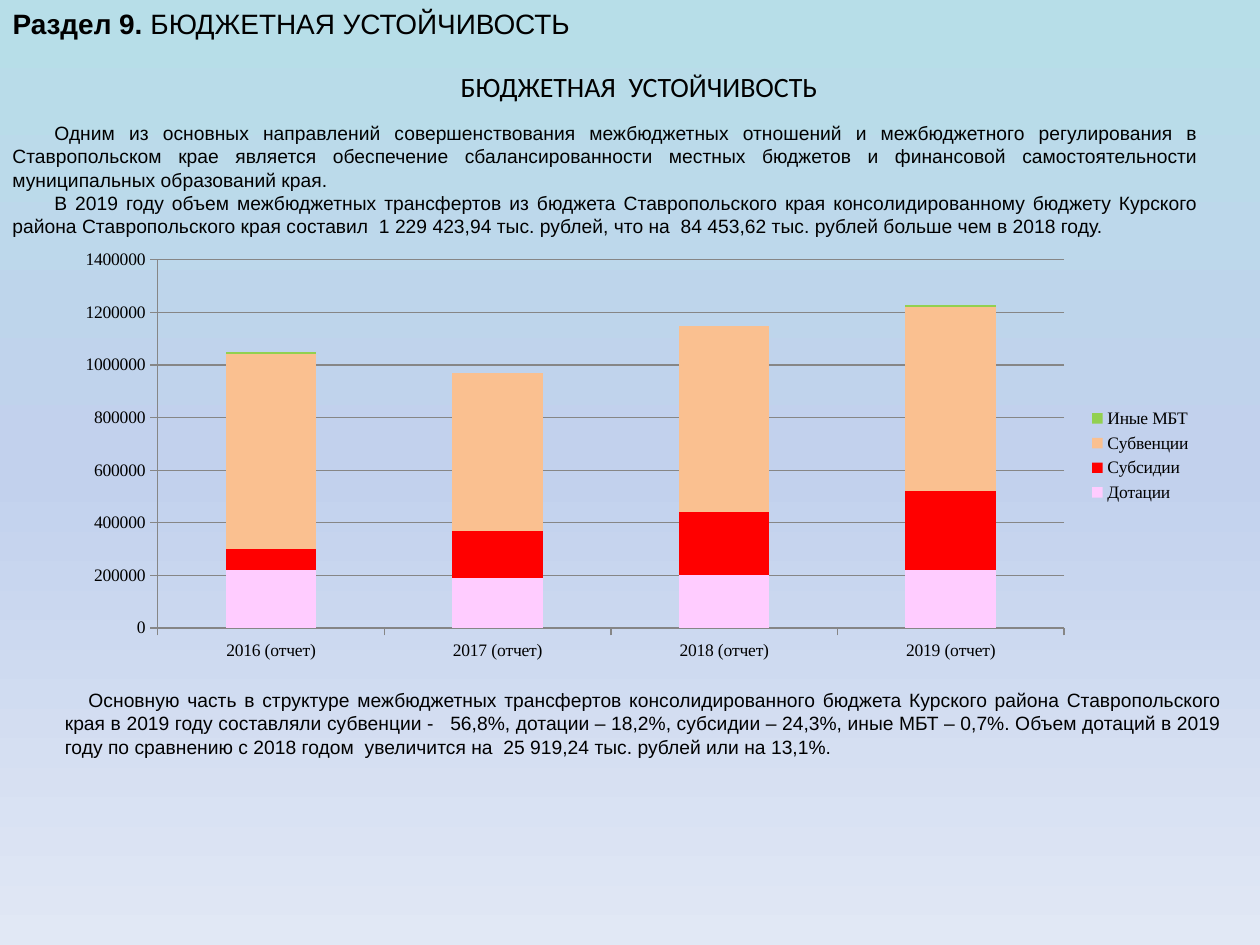
from copy import deepcopy

from lxml.etree import SubElement
from pptx import Presentation
from pptx.chart.data import CategoryChartData
from pptx.dml.color import RGBColor
from pptx.enum.chart import XL_CHART_TYPE, XL_LEGEND_POSITION, XL_TICK_MARK
from pptx.enum.text import MSO_ANCHOR, PP_ALIGN
from pptx.oxml.ns import qn
from pptx.util import Pt

# Content
COLORS = {
    "text": "000000", "axis": "868686",
    "sky": "B7DEE8", "middle": "C2D1ED", "pale": "E1E8F5",
    "Дотации": "FFCCFF", "Субсидии": "FF0000",
    "Субвенции": "FAC090", "Иные МБТ": "92D050",
}
BACKGROUND = [(0, "sky"), (0.5, "middle"), (1, "pale")]

TITLE = [("Раздел 9. ", True), ("БЮДЖЕТНАЯ УСТОЙЧИВОСТЬ", False)]
HEADING = [("БЮДЖЕТНАЯ  УСТОЙЧИВОСТЬ", False)]
INTRO = [
    "Одним из основных направлений совершенствования межбюджетных отношений и "
    "межбюджетного регулирования в Ставропольском крае является обеспечение "
    "сбалансированности местных бюджетов и финансовой самостоятельности "
    "муниципальных образований края.",
    "В 2019 году объем межбюджетных трансфертов из бюджета Ставропольского края "
    "консолидированному бюджету Курского района Ставропольского края составил  "
    "1 229 423,94 тыс. рублей, что на  84 453,62 тыс. рублей больше чем в 2018 году.",
]
SUMMARY = [
    "Основную часть в структуре межбюджетных трансфертов консолидированного бюджета "
    "Курского района Ставропольского края в 2019 году составляли субвенции -   56,8%, "
    "дотации – 18,2%, субсидии – 24,3%, иные МБТ – 0,7%. Объем дотаций в 2019 году по "
    "сравнению с 2018 годом  увеличится на  25 919,24 тыс. рублей или на 13,1%.",
]
YEARS = [f"{year} (отчет)" for year in range(2016, 2020)]
TRANSFERS = {
    "Дотации": (220000, 190000, 200000, 220000),
    "Субсидии": (80000, 180000, 240000, 300000),
    "Субвенции": (740000, 600000, 710000, 700000),
    "Иные МБТ": (10000, 0, 0, 10000),
}
PLOT_AREA = {"x": 0.083, "y": 0.042, "w": 0.794, "h": 0.862}


def rgb(name):
    return RGBColor.from_string(COLORS[name])


def apply(target, values):
    for name, value in values.items():
        setattr(target, name, value)


def style_font(font, face, size, bold=False):
    apply(font, {"name": face, "size": Pt(size), "bold": bold})
    font.color.rgb = rgb("text")


def place(shape, left, top, width, height, wrap=True, margin_left=7.2):
    apply(shape, {"left": Pt(left), "top": Pt(top),
                  "width": Pt(width), "height": Pt(height)})
    apply(shape.text_frame, {
        "word_wrap": wrap, "vertical_anchor": MSO_ANCHOR.TOP,
        "margin_left": Pt(margin_left), "margin_right": Pt(7.2),
        "margin_top": Pt(3.6), "margin_bottom": Pt(3.6)})


def write_line(shape, runs, face):
    paragraph = shape.text_frame.paragraphs[0]
    paragraph.alignment = PP_ALIGN.LEFT
    for text, bold in runs:
        run = paragraph.add_run()
        run.text = text
        style_font(run.font, face, 16, bold)


def add_body(slide, paragraphs, box, indent):
    body = slide.shapes.add_textbox(0, 0, 0, 0)
    place(body, *box)
    frame = body.text_frame
    for index, text in enumerate(paragraphs):
        paragraph = frame.add_paragraph() if index else frame.paragraphs[0]
        paragraph.alignment = PP_ALIGN.JUSTIFY
        paragraph._p.get_or_add_pPr().set("indent", str(Pt(indent)))
        run = paragraph.add_run()
        run.text = text
        style_font(run.font, "Arial", 11)


def paint_background(slide):
    fill = slide.background.fill
    fill.gradient()
    fill.gradient_angle = 270
    stop_list = next(slide.element.iter(qn("a:gsLst")))
    stop_list.append(deepcopy(stop_list[0]))
    for stop, (position, color) in zip(fill.gradient_stops, BACKGROUND):
        stop.position = position
        stop.color.rgb = rgb(color)


def add_transfers_chart(slide):
    data = CategoryChartData(number_format="General")
    data.categories = YEARS
    for name, values in TRANSFERS.items():
        data.add_series(name, values)
    chart = slide.shapes.add_chart(
        XL_CHART_TYPE.COLUMN_STACKED, Pt(36), Pt(138.24), Pt(652.32), Pt(244.08), data).chart
    style_font(chart.font, "Times New Roman", 10)
    apply(chart, {"has_title": False, "has_legend": True})
    apply(chart.legend, {"position": XL_LEGEND_POSITION.RIGHT, "include_in_layout": False})

    # Stacked columns
    plot = chart.plots[0]
    apply(plot, {"gap_width": 150, "overlap": 100, "vary_by_categories": False})
    for series in plot.series:
        series.format.fill.solid()
        series.format.fill.fore_color.rgb = rgb(series.name)

    # Axes and gridlines
    values, years = chart.value_axis, chart.category_axis
    apply(values, {"minimum_scale": 0, "maximum_scale": 1400000,
                   "major_unit": 200000, "has_major_gridlines": True})
    for axis in (values, years):
        apply(axis, {"major_tick_mark": XL_TICK_MARK.OUTSIDE,
                     "minor_tick_mark": XL_TICK_MARK.NONE})
    for part in (values, years, values.major_gridlines):
        part.format.line.color.rgb = rgb("axis")
        part.format.line.width = Pt(0.75)

    # Fixed inner plot area
    plot_area = next(chart.element.iter(qn("c:plotArea")))
    layout = plot_area.find(qn("c:layout"))
    if layout is None:
        layout = SubElement(plot_area, qn("c:layout"))
        plot_area.insert(0, layout)
    manual = SubElement(layout, qn("c:manualLayout"))
    settings = {"layoutTarget": "inner", "xMode": "edge", "yMode": "edge", **PLOT_AREA}
    for tag, value in settings.items():
        SubElement(manual, qn(f"c:{tag}")).set("val", str(value))


def main():
    deck = Presentation()
    apply(deck, {"slide_width": Pt(720), "slide_height": Pt(540)})
    slide = deck.slides.add_slide(deck.slide_layouts[5])
    paint_background(slide)

    # Section title and heading
    title = slide.shapes.title
    place(title, 0, 0, 342.72, 26.64, wrap=False)
    write_line(title, TITLE, "Arial")
    heading = slide.shapes.add_textbox(0, 0, 0, 0)
    place(heading, 0, 36, 720, 26.64, margin_left=263.3)
    write_line(heading, HEADING, "Calibri")

    # Text above and below the chart
    add_body(slide, INTRO, (0, 66, 691.92, 74.16), indent=24)
    add_transfers_chart(slide)
    add_body(slide, SUMMARY, (30, 390, 675.36, 60.48), indent=13.5)

    deck.save("out.pptx")


if __name__ == "__main__":
    main()
